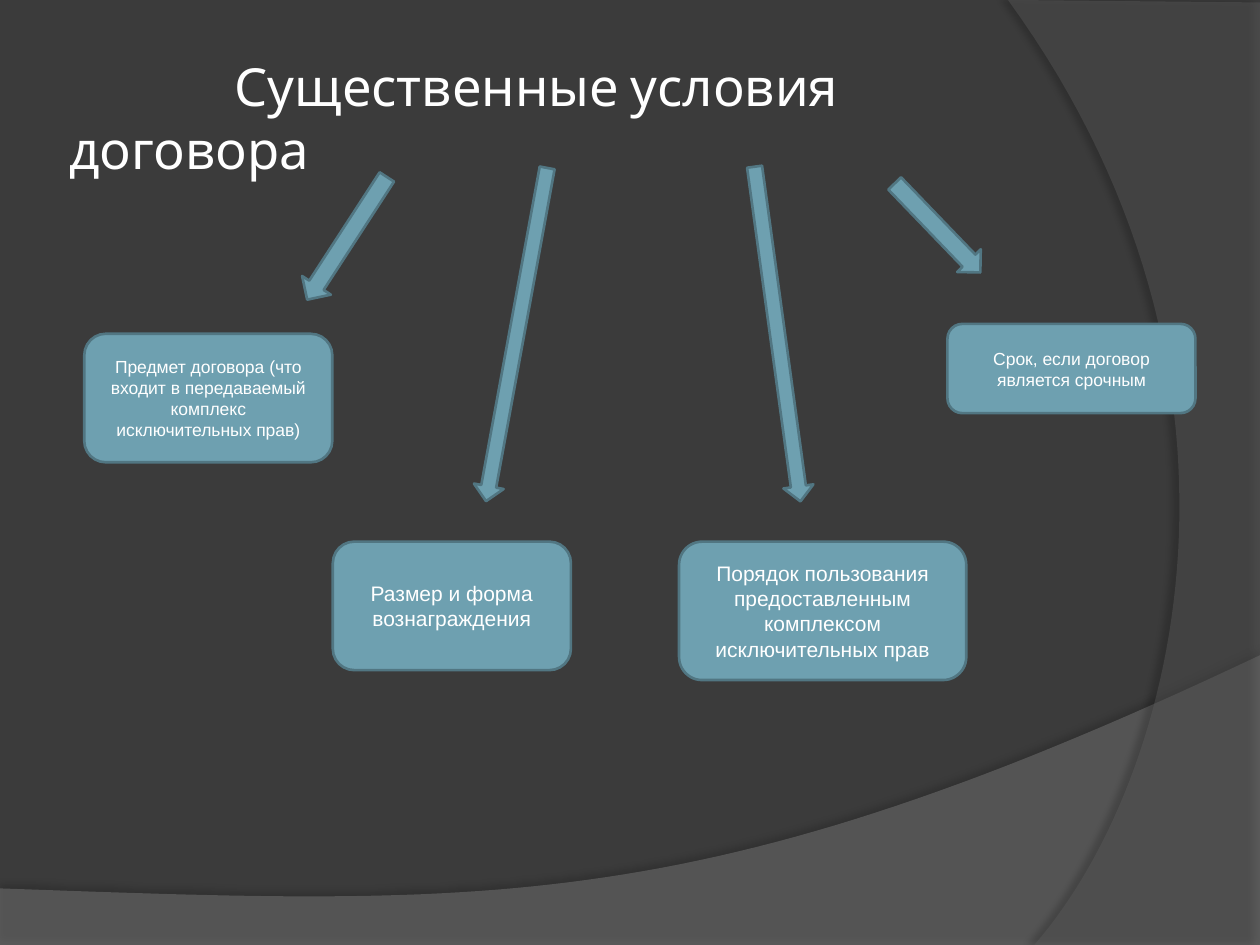
import pptx
import pptx.dml.color
import pptx.enum.shapes
import pptx.enum.text
import pptx.oxml
import pptx.oxml.ns
import pptx.util
from pptx.util import Cm

# Content; lengths in cm
TITLE = "Существенные условия договора"
CONDITIONS = [  # text, (left, top, width, height), type size key
    ("Предмет договора (что входит в передаваемый комплекс исключительных прав)",
     (1.7, 6.73, 5, 2.59), "small"),
    ("Размер и форма вознаграждения", (6.71, 10.92, 4.8, 2.59), "body"),
    ("Порядок пользования предоставленным комплексом исключительных прав",
     (13.69, 10.92, 5.79, 2.79), "body"),
    ("Срок, если договор является срочным", (19.1, 6.53, 5, 1.8), "small"),
]
ARROWS = [  # (left, top, width, height), rotation, shaft share of the width
    ((6.65, 3.33, 0.69, 2.95), 33, 0.5),
    ((10.11, 3.33, 0.61, 6.83), 10.4, 0.5),
    ((15.37, 3.33, 0.61, 6.81), 352.2, 0.5),
    ((18.57, 3.35, 0.66, 2.49), 316.1, 0.54),
]
WAVES = [  # corners, then a Bezier curve back to the first corner
    dict(corners=[(0, 17.91), (0, 19.05), (25.4, 19.05)],
         curve=[(25.4, 13.21), (14.2, 18.52), (9.93, 18.26), (0, 17.91)],
         color="7F7F7F", alpha=45, shadow=(35, 4, 3.5, 270)),
    dict(corners=[(25.4, 0.05), (25.4, 19.05)],
         curve=[(20.85, 19.05), (23.75, 15.72), (25.86, 7.62), (20.32, 0)],
         color="5E5E5E", alpha=40, shadow=(45, 4, 4, 180)),
]
THEME = {
    "background": "3B3B3B", "fill": "6EA0B0", "line": "517682", "text": "FFFFFF",
    "heading_font": "Cabin", "body_font": "Arial",
    "title": 30, "body": 12, "small": 10, "line_width": 1.5,
}


def rgb(value):
    return pptx.dml.color.RGBColor.from_string(value)


def write(shape, text, font, size, align):
    frame = shape.text_frame
    frame.word_wrap = True
    frame.auto_size = pptx.enum.text.MSO_AUTO_SIZE.NONE
    frame.vertical_anchor = pptx.enum.text.MSO_ANCHOR.MIDDLE
    paragraph = frame.paragraphs[0]
    paragraph.alignment = align
    run = paragraph.add_run()
    run.text = text
    run.font.name = font
    run.font.size = pptx.util.Pt(size)
    run.font.color.rgb = rgb(THEME["text"])
    return paragraph


def add_block(slide, preset, box):
    block = slide.shapes.add_shape(preset, *map(Cm, box))
    block.shadow.inherit = False
    block.fill.solid()
    block.fill.fore_color.rgb = rgb(THEME["fill"])
    block.line.color.rgb = rgb(THEME["line"])
    block.line.width = pptx.util.Pt(THEME["line_width"])
    return block


def bezier(points, steps=60):
    a, b, c, d = points
    for step in range(steps + 1):
        t = step / steps
        u = 1 - t
        yield tuple(u**3 * a[i] + 3 * u * u * t * b[i] + 3 * u * t * t * c[i] + t**3 * d[i]
                    for i in (0, 1))


def add_wave(slide, corners, curve, color, alpha, shadow):
    outline = [(Cm(x), Cm(y)) for x, y in corners + list(bezier(curve))]
    builder = slide.shapes.build_freeform(*outline[0])
    builder.add_line_segments(outline[1:], close=True)
    wave = builder.convert_to_shape()
    wave.shadow.inherit = False
    wave.line.fill.background()
    wave.fill.solid()
    wave.fill.fore_color.rgb = rgb(color)
    # Transparency and soft outer shadow
    namespace = pptx.oxml.ns.nsdecls("a")
    qn = pptx.oxml.ns.qn
    properties = wave._element.spPr
    tint = properties.find(qn("a:solidFill")).find(qn("a:srgbClr"))
    tint.append(pptx.oxml.parse_xml(f'<a:alpha {namespace} val="{alpha * 1000}"/>'))
    opacity, blur, distance, angle = shadow
    properties.find(qn("a:effectLst")).append(pptx.oxml.parse_xml(
        f'<a:outerShdw {namespace} blurRad="{pptx.util.Pt(blur)}" '
        f'dist="{pptx.util.Pt(distance)}" dir="{angle * 60000}" rotWithShape="0">'
        f'<a:srgbClr val="000000"><a:alpha val="{opacity * 1000}"/></a:srgbClr>'
        '</a:outerShdw>'))


def main():
    deck = pptx.Presentation()
    deck.slide_width, deck.slide_height = Cm(25.4), Cm(19.05)
    slide = deck.slides.add_slide(deck.slide_layouts[5])
    slide.background.fill.solid()
    slide.background.fill.fore_color.rgb = rgb(THEME["background"])
    align = pptx.enum.text.PP_ALIGN
    presets = pptx.enum.shapes.MSO_SHAPE

    # Backdrop
    for wave in WAVES:
        add_wave(slide, **wave)

    # Title, in front of the backdrop, with an indented first line
    title = slide.shapes.title
    title._element.getparent().append(title._element)
    title.left, title.top, title.width, title.height = map(Cm, (1.27, 0.76, 20.75, 3.18))
    frame = title.text_frame
    frame.margin_left = frame.margin_top = frame.margin_bottom = Cm(0.13)
    frame.margin_right = Cm(0.5)
    heading = write(title, TITLE, THEME["heading_font"], THEME["title"], align.LEFT)
    heading._p.get_or_add_pPr().set("indent", str(Cm(3.33)))

    # Arrows from the title to the conditions
    for box, rotation, shaft in ARROWS:
        arrow = add_block(slide, presets.DOWN_ARROW, box)
        arrow.rotation = rotation
        arrow.adjustments[0] = shaft

    # Conditions
    for text, box, size in CONDITIONS:
        condition = add_block(slide, presets.ROUNDED_RECTANGLE, box)
        write(condition, text, THEME["body_font"], THEME[size], align.CENTER)

    deck.save("out.pptx")


if __name__ == "__main__":
    main()
